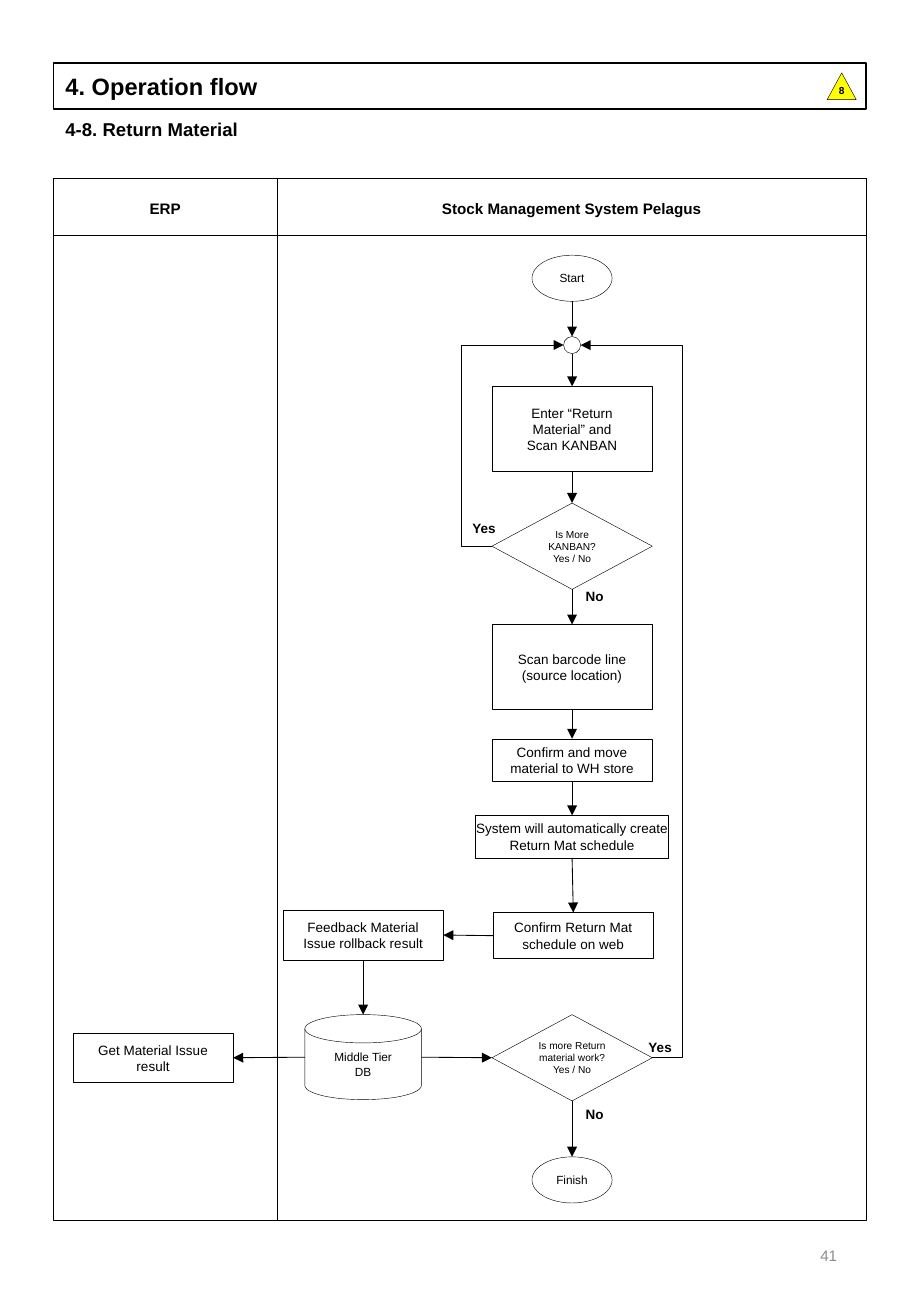
from dataclasses import dataclass

from lxml.etree import SubElement
from pptx import Presentation
from pptx.dml.color import RGBColor
from pptx.enum.shapes import MSO_CONNECTOR, MSO_SHAPE
from pptx.enum.text import MSO_ANCHOR, PP_ALIGN
from pptx.oxml.ns import qn
from pptx.util import Inches, Pt


@dataclass(frozen=True)
class Theme:
    font: str = "Arial"
    ink: RGBColor = RGBColor(0, 0, 0)
    muted: RGBColor = RGBColor(0x8C, 0x8C, 0x8C)
    warning: RGBColor = RGBColor(0xFF, 0xFF, 0)
    title: int = 14
    subtitle: int = 11
    heading: int = 9
    step: int = 8
    terminal: int = 7
    decision: int = 6
    hairline: float = 0.25
    arrow: float = 0.5
    border: float = 1


THEME = Theme()
TOP, LEFT, BOTTOM, RIGHT = range(4)

# Layout in inches
FRAME_LEFT, FRAME_WIDTH = 0.44, 6.69
LANES_TOP, LANES_HEIGHT, HEADER_HEIGHT = 1.47, 8.57, 0.47
LANE_SPLIT = 2.28
ERP_CENTER, TIER_CENTER, MAIN_CENTER = 1.26, 2.99, 4.71
STEP_WIDTH = 1.32
DETOUR = -0.424


def write(shape, text, size, bold=False, align=PP_ALIGN.CENTER,
          anchor=MSO_ANCHOR.MIDDLE, color=THEME.ink, insets=(0.1, 0.05, 0.1, 0.05)):
    frame = shape.text_frame
    frame.text = text
    frame.word_wrap = True
    frame.vertical_anchor = anchor
    (frame.margin_left, frame.margin_top,
     frame.margin_right, frame.margin_bottom) = map(Inches, insets)
    for paragraph in frame.paragraphs:
        paragraph.alignment = align
        for run in paragraph.runs:
            run.font.name = THEME.font
            run.font.size = Pt(size)
            run.font.bold = bold
            run.font.color.rgb = color


def add_label(slide, left, top, width, height, text, size, bold=True, **style):
    box = slide.shapes.add_textbox(*map(Inches, (left, top, width, height)))
    write(box, text, size, bold, **style)


def add_outline(slide, kind, left, top, width, height, weight=THEME.hairline):
    shape = slide.shapes.add_shape(kind, *map(Inches, (left, top, width, height)))
    shape.shadow.inherit = False
    shape.fill.background()
    shape.line.color.rgb = THEME.ink
    shape.line.width = Pt(weight)
    return shape


def add_node(slide, kind, center, top, width, height, text="", size=THEME.step, **style):
    node = add_outline(slide, kind, center - width / 2, top, width, height)
    if text:
        write(node, text, size, **style)
    return node


def add_step(slide, center, top, height, text, width=STEP_WIDTH, **style):
    return add_node(slide, MSO_SHAPE.RECTANGLE, center, top, width, height, text, **style)


def add_decision(slide, top, text, **style):
    return add_node(slide, MSO_SHAPE.FLOWCHART_DECISION, MAIN_CENTER, top, STEP_WIDTH,
                    0.71, text, THEME.decision, **style)


def add_terminal(slide, top, text):
    return add_node(slide, MSO_SHAPE.OVAL, MAIN_CENTER, top, 0.66, 0.38, text,
                    THEME.terminal)


def style_line(line):
    line.line.color.rgb = THEME.ink
    line.line.width = Pt(THEME.arrow)
    SubElement(line._element.spPr, qn("a:effectLst"))


def connection_site(shape, side):
    """Ovals have eight sites; the disk has an extra one before its top."""
    if shape.auto_shape_type == MSO_SHAPE.OVAL:
        return side * 2
    if shape.auto_shape_type == MSO_SHAPE.FLOWCHART_MAGNETIC_DISK:
        return side + 1
    return side


def add_arrow(slide, source, source_side, target, target_side, detour=None):
    kind = MSO_CONNECTOR.STRAIGHT if detour is None else MSO_CONNECTOR.ELBOW
    arrow = slide.shapes.add_connector(kind, 0, 0, 0, 0)
    arrow.begin_connect(source, source_side)
    arrow.end_connect(target, target_side)
    for tag, shape, side in (("a:stCxn", source, source_side),
                             ("a:endCxn", target, target_side)):
        joint = next(arrow._element.iter(qn(tag)))
        joint.set("idx", str(connection_site(shape, side)))
    style_line(arrow)
    SubElement(arrow.line._get_or_add_ln(), qn("a:tailEnd"), type="triangle")
    if detour is not None:
        guides = arrow._element.spPr.find(qn("a:prstGeom")).get_or_add_avLst()
        SubElement(guides, qn("a:gd"), name="adj1", fmla=f"val {round(detour * 100000)}")


def add_header(slide):
    banner = add_outline(slide, MSO_SHAPE.RECTANGLE, FRAME_LEFT, 0.52, FRAME_WIDTH, 0.38,
                         THEME.border)
    write(banner, "4. Operation flow", THEME.title, True, PP_ALIGN.LEFT)
    add_label(slide, FRAME_LEFT, 0.92, FRAME_WIDTH, 0.29, "4-8. Return Material",
              THEME.subtitle, align=PP_ALIGN.LEFT, anchor=MSO_ANCHOR.TOP)
    revision = add_node(slide, MSO_SHAPE.ISOSCELES_TRIANGLE, 6.93, 0.6, 0.24, 0.22, "8",
                        THEME.decision, bold=True, insets=(0.1, 0, 0.1, 0.05))
    revision.fill.solid()
    revision.fill.fore_color.rgb = THEME.warning


def add_lanes(slide):
    for height in (LANES_HEIGHT, HEADER_HEIGHT):
        add_outline(slide, MSO_SHAPE.RECTANGLE, FRAME_LEFT, LANES_TOP, FRAME_WIDTH, height)
    divider = slide.shapes.add_connector(
        MSO_CONNECTOR.STRAIGHT, Inches(LANE_SPLIT), Inches(LANES_TOP),
        Inches(LANE_SPLIT), Inches(LANES_TOP + LANES_HEIGHT))
    style_line(divider)
    frame_right = FRAME_LEFT + FRAME_WIDTH
    for left, right, name in ((FRAME_LEFT, LANE_SPLIT, "ERP"),
                              (LANE_SPLIT, frame_right, "Stock Management System Pelagus")):
        add_label(slide, left, LANES_TOP + 0.01, right - left, HEADER_HEIGHT, name,
                  THEME.heading)


def add_flow(slide):
    # Main column
    start = add_terminal(slide, 2.1, "Start")
    junction = add_node(slide, MSO_SHAPE.OVAL, MAIN_CENTER, 2.77, 0.14, 0.14)
    enter = add_step(slide, MAIN_CENTER, 3.18, 0.7, "Enter “Return Material” and\nScan KANBAN")
    more_kanban = add_decision(slide, 4.14, "Is More KANBAN?\nYes / No")
    scan = add_step(slide, MAIN_CENTER, 5.14, 0.7, "Scan barcode line\n(source location)")
    move = add_step(slide, MAIN_CENTER, 6.08, 0.35, "Confirm and move material to WH store")
    create = add_step(slide, MAIN_CENTER, 6.71, 0.35,
                      "System will automatically create Return Mat schedule",
                      width=1.59, insets=(0, 0.05, 0, 0.05))
    confirm = add_step(slide, MAIN_CENTER + 0.01, 7.51, 0.38,
                       "Confirm Return Mat schedule on web")
    more_work = add_decision(slide, 8.35, "Is more Return material work?\nYes / No",
                             insets=(0, 0.05, 0, 0.05))
    finish = add_terminal(slide, 9.52, "Finish")

    # Feedback to the ERP
    feedback = add_step(slide, TIER_CENTER, 7.49, 0.41, "Feedback Material Issue rollback result")
    database = add_node(slide, MSO_SHAPE.FLOWCHART_MAGNETIC_DISK, TIER_CENTER, 8.35, 0.96,
                        0.7, "Middle Tier\nDB", THEME.terminal)
    get_result = add_step(slide, ERP_CENTER, 8.5, 0.41, "Get Material Issue result")

    # Arrows
    descent = [start, junction, enter, more_kanban, scan, move, create, confirm]
    downward = [*zip(descent, descent[1:]), (feedback, database), (more_work, finish)]
    for source, target in downward:
        add_arrow(slide, source, BOTTOM, target, TOP)
    add_arrow(slide, confirm, LEFT, feedback, RIGHT)
    add_arrow(slide, database, LEFT, get_result, RIGHT)
    add_arrow(slide, database, RIGHT, more_work, LEFT)
    add_arrow(slide, more_kanban, LEFT, junction, LEFT, DETOUR)
    add_arrow(slide, more_work, RIGHT, junction, RIGHT, DETOUR)

    # Decision answers
    for left, top, answer in ((3.73, 4.23, "Yes"), (4.64, 4.79, "No"),
                              (5.18, 8.5, "Yes"), (4.64, 9.05, "No")):
        add_label(slide, left, top, 0.51, 0.23, answer, THEME.step)


def main():
    presentation = Presentation()
    presentation.slide_width, presentation.slide_height = Inches(7.5), Inches(10.83)
    slide = presentation.slides.add_slide(presentation.slide_layouts[6])
    add_header(slide)
    add_lanes(slide)
    add_flow(slide)
    add_label(slide, 5.3, 10.04, 1.69, 0.58, "41", THEME.heading, bold=False,
              align=PP_ALIGN.RIGHT, color=THEME.muted)
    presentation.save("out.pptx")


if __name__ == "__main__":
    main()
